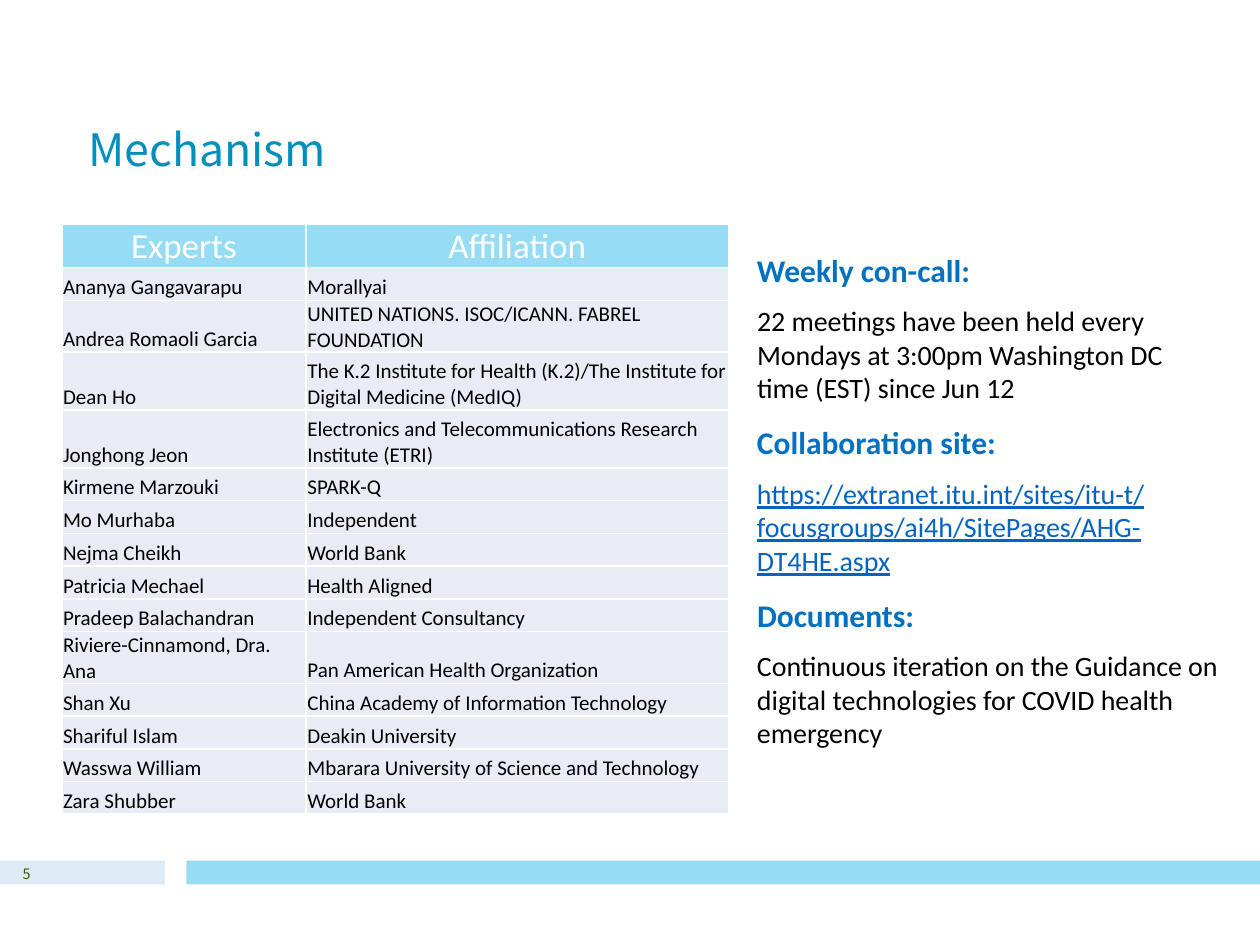
import pptx
import pptx.util
import pptx.dml.color
import pptx.enum.shapes
import pptx.enum.text
import pptx.oxml
import pptx.oxml.ns
from dataclasses import dataclass

Inches = pptx.util.Inches
Pt = pptx.util.Pt
RGB = pptx.dml.color.RGBColor.from_string
ANCHOR = pptx.enum.text.MSO_ANCHOR
ALIGN = pptx.enum.text.PP_ALIGN


@dataclass(frozen=True)
class Theme:
    title_font: str = "Noto Sans CJK SC"
    body_font: str = "Calibri"
    title: str = "008EBC"
    accent: str = "95DCF4"
    pale: str = "DEEBF7"
    row: str = "E9EBF5"
    heading: str = "0070C0"
    link: str = "0563C1"
    number: str = "455500"
    text: str = "000000"
    white: str = "FFFFFF"
    title_size: float = 25.5
    header_size: float = 20
    heading_size: float = 18
    body_size: float = 16
    cell_size: float = 12
    number_size: float = 8.2


theme = Theme()


def style(p, size, color, font=theme.body_font, align=ALIGN.LEFT, bold=False):
    p.alignment = align
    p.font.name = font
    p.font.size = Pt(size)
    p.font.bold = bold
    p.font.color.rgb = RGB(color)


def add_text(s, text, left, top, width, height, wrap=True):
    tf = s.shapes.add_textbox(Inches(left), Inches(top), Inches(width), Inches(height)).text_frame
    tf.word_wrap = wrap
    tf.text = text
    return tf


prs = pptx.Presentation()
prs.slide_width, prs.slide_height = Inches(10), Inches(7.5)
s = prs.slides.add_slide(prs.slide_layouts[5])

for left, width, color in [(0, 1.31, theme.pale), (1.48, 8.52, theme.accent)]:
    bar = s.shapes.add_shape(pptx.enum.shapes.MSO_SHAPE.RECTANGLE,
                             Inches(left), Inches(6.83), Inches(width), Inches(0.19))
    bar.shadow.inherit = False
    bar.fill.solid()
    bar.fill.fore_color.rgb = RGB(color)
    bar.line.fill.background()

title = s.shapes.title
title.left, title.top, title.width, title.height = Inches(0.63), Inches(0.46), Inches(7.69), Inches(0.97)
tf = title.text_frame
tf.text = "Mechanism"
tf.auto_size = pptx.enum.text.MSO_AUTO_SIZE.NONE
tf.vertical_anchor = ANCHOR.BOTTOM
tf.margin_left = tf.margin_right = Inches(0.07)
tf.margin_top = tf.margin_bottom = Inches(0.04)
style(tf.paragraphs[0], theme.title_size, theme.title, theme.title_font)

tf = add_text(s, "5", 0, 6.84, 0.34, 0.19)
tf.vertical_anchor = ANCHOR.MIDDLE
style(tf.paragraphs[0], theme.number_size, theme.number, theme.title_font, ALIGN.RIGHT)

rows = [
    ("Experts", "Affiliation", 0.32),
    ("Ananya Gangavarapu", "Morallyai", 0.26),
    ("Andrea Romaoli Garcia", "UNITED NATIONS. ISOC/ICANN. FABREL FOUNDATION", 0.36),
    ("Dean Ho", "The K.2 Institute for Health (K.2)/The Institute for Digital Medicine (MedIQ)", 0.46),
    ("Jonghong Jeon", "Electronics and Telecommunications Research Institute (ETRI)", 0.46),
    ("Kirmene Marzouki", "SPARK-Q", 0.26),
    ("Mo Murhaba", "Independent", 0.26),
    ("Nejma Cheikh", "World Bank", 0.26),
    ("Patricia Mechael", "Health Aligned", 0.26),
    ("Pradeep Balachandran", "Independent Consultancy", 0.26),
    ("Riviere-Cinnamond, Dra. Ana", "Pan American Health Organization", 0.36),
    ("Shan Xu", "China Academy of Information Technology", 0.26),
    ("Shariful Islam", "Deakin University", 0.26),
    ("Wasswa William", "Mbarara University of Science and Technology", 0.26),
    ("Zara Shubber", "World Bank", 0.26),
]
table = s.shapes.add_table(len(rows), 2, Inches(0.49), Inches(1.78), Inches(5.29), Inches(4.66)).table
table.horz_banding = False
table.columns[0].width, table.columns[1].width = Inches(1.94), Inches(3.35)
for i, (expert, affiliation, height) in enumerate(rows):
    table.rows[i].height = Inches(height)
    for j, text in enumerate((expert, affiliation)):
        cell = table.cell(i, j)
        cell.text = text
        cell.vertical_anchor = ANCHOR.BOTTOM
        cell.margin_left = cell.margin_right = cell.margin_top = Inches(0.01)
        cell.margin_bottom = 0
        p = cell.text_frame.paragraphs[0]
        if i == 0:
            style(p, theme.header_size, theme.white, align=ALIGN.CENTER)
        else:
            style(p, theme.cell_size, theme.text)
        tcPr = cell._tc.get_or_add_tcPr()
        for side in ("lnL", "lnR", "lnT", "lnB"):
            tcPr.append(pptx.oxml.parse_xml(
                f'<a:{side} {pptx.oxml.ns.nsdecls("a")} w="12700"><a:solidFill>'
                f'<a:srgbClr val="{theme.white}"/></a:solidFill></a:{side}>'))
        cell.fill.solid()
        cell.fill.fore_color.rgb = RGB(theme.row if i else theme.accent)

sections = [
    ("Weekly con-call:", 1.96,
     "22 meetings have been held every Mondays at 3:00pm Washington DC time (EST) since Jun 12", 3.71, theme.text),
    ("Collaboration site:", 2.17,
     "https://extranet.itu.int/sites/itu-t/focusgroups/ai4h/SitePages/AHG-DT4HE.aspx", 3.83, theme.link),
    ("Documents:", 1.52,
     "Continuous iteration on the Guidance on digital technologies for COVID health emergency", 3.97, theme.text),
]
for i, (heading, heading_width, body, body_width, color) in enumerate(sections):
    top = 1.94 + 1.37 * i
    p = add_text(s, heading, 5.91, top, heading_width, 0.4, wrap=False).paragraphs[0]
    style(p, theme.heading_size, theme.heading, bold=True)
    p = add_text(s, body, 5.91, top + 0.42, body_width, 0.91).paragraphs[0]
    style(p, theme.body_size, color)
    p.font.underline = color == theme.link

prs.save("out.pptx")
